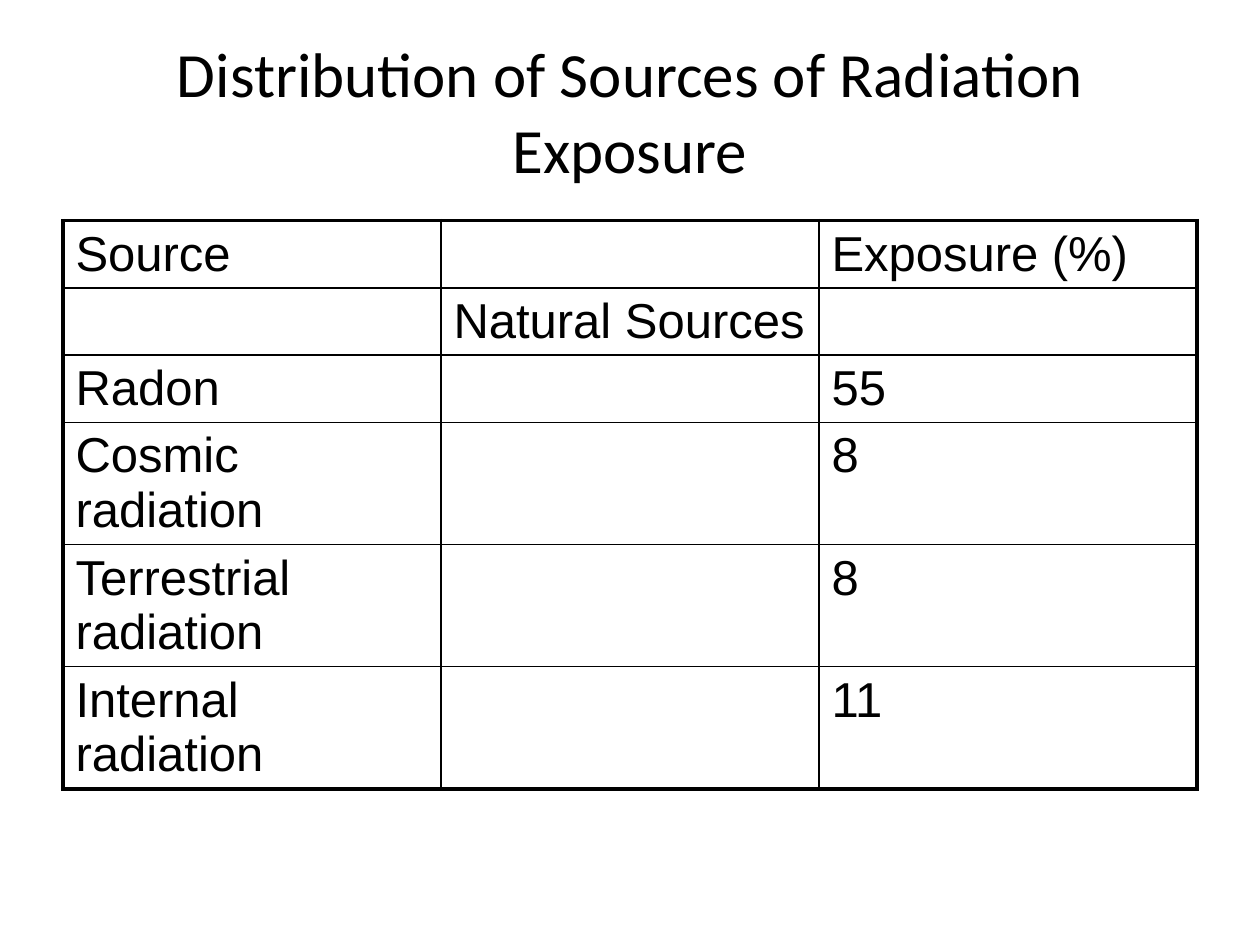
import pptx
import pptx.util
import pptx.dml.color
import pptx.enum.text
import pptx.oxml
import pptx.oxml.ns
from pptx.util import Inches

COLORS = {"ink": "000000", "paper": "FFFFFF"}
ROWS = [
    ("Source", "", "Exposure (%)"),
    ("", "Natural Sources", ""),
    ("Radon", "", "55"),
    ("Cosmic radiation", "", "8"),
    ("Terrestrial radiation", "", "8"),
    ("Internal radiation", "", "11"),
]
ROW_HEIGHTS = [0.53] * 3 + [0.97] * 3


class Deck:
    title_font, title_size = "Calibri", 36
    body_font, body_size = "Arial", 28
    inner, outer = 1, 2.25

    def __init__(self, width, height):
        self.prs = pptx.Presentation()
        self.prs.slide_width, self.prs.slide_height = Inches(width), Inches(height)
        self.s = self.prs.slides.add_slide(self.prs.slide_layouts[5])
        fill = self.s.background.fill
        fill.solid()
        fill.fore_color.rgb = self.color("paper")

    def color(self, name):
        return pptx.dml.color.RGBColor.from_string(COLORS[name])

    def font(self, p, name, size):
        p.font.name, p.font.size = name, pptx.util.Pt(size)
        p.font.color.rgb = self.color("ink")

    def title(self, text, x, y, w, h):
        sp = self.s.shapes.title
        sp.left, sp.top, sp.width, sp.height = map(Inches, (x, y, w, h))
        tf = sp.text_frame
        tf.text = text
        tf.vertical_anchor = pptx.enum.text.MSO_ANCHOR.MIDDLE
        p = tf.paragraphs[0]
        p.alignment = pptx.enum.text.PP_ALIGN.CENTER
        self.font(p, self.title_font, self.title_size)

    def border(self, cell, side, weight):
        ns = pptx.oxml.ns.nsdecls("a")
        cell._tc.get_or_add_tcPr().append(pptx.oxml.parse_xml(
            f'<a:ln{side} {ns} w="{pptx.util.Pt(weight)}"><a:solidFill>'
            f'<a:srgbClr val="{COLORS["ink"]}"/></a:solidFill></a:ln{side}>'))

    def table(self, rows, heights, x, y, w):
        n_rows, n_cols = len(rows), len(rows[0])
        table = self.s.shapes.add_table(
            n_rows, n_cols, *map(Inches, (x, y, w, sum(heights)))).table
        table.first_row = table.horz_banding = False
        for r, (row, height) in enumerate(zip(rows, heights)):
            table.rows[r].height = Inches(height)
            for c, text in enumerate(row):
                cell = table.cell(r, c)
                edges = {"L": c == 0, "R": c == n_cols - 1,
                         "T": r == 0, "B": r == n_rows - 1}
                for side, is_outer in edges.items():
                    self.border(cell, side, self.outer if is_outer else self.inner)
                cell.fill.background()
                if text:
                    cell.text = text
                    self.font(cell.text_frame.paragraphs[0], self.body_font, self.body_size)


def main():
    deck = Deck(10, 7.5)
    deck.title("Distribution of Sources of Radiation Exposure", 0.5, 0.25, 9, 1.25)
    deck.table(ROWS, ROW_HEIGHTS, 0.5, 1.75, 9)
    deck.prs.save("out.pptx")


if __name__ == "__main__":
    main()
